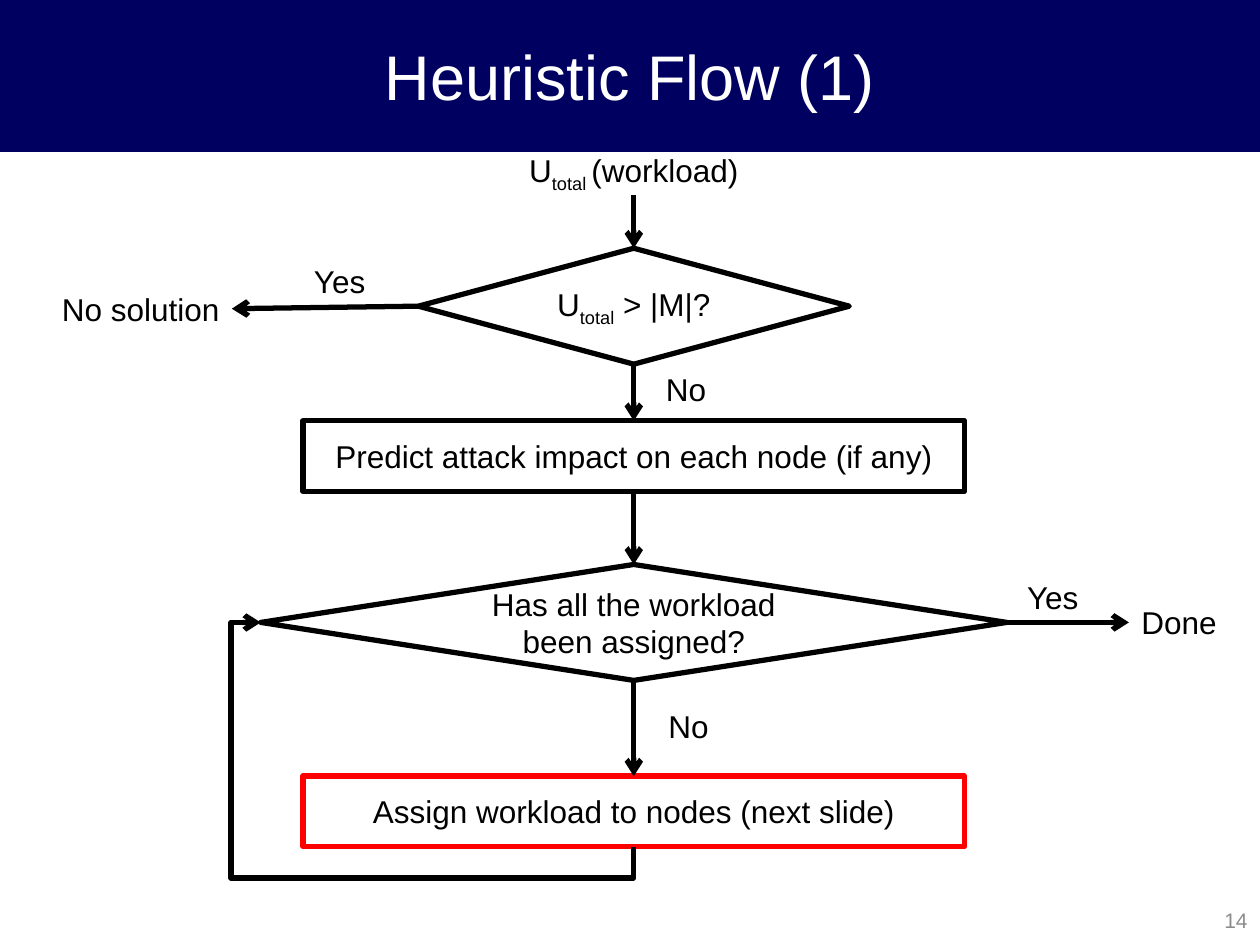
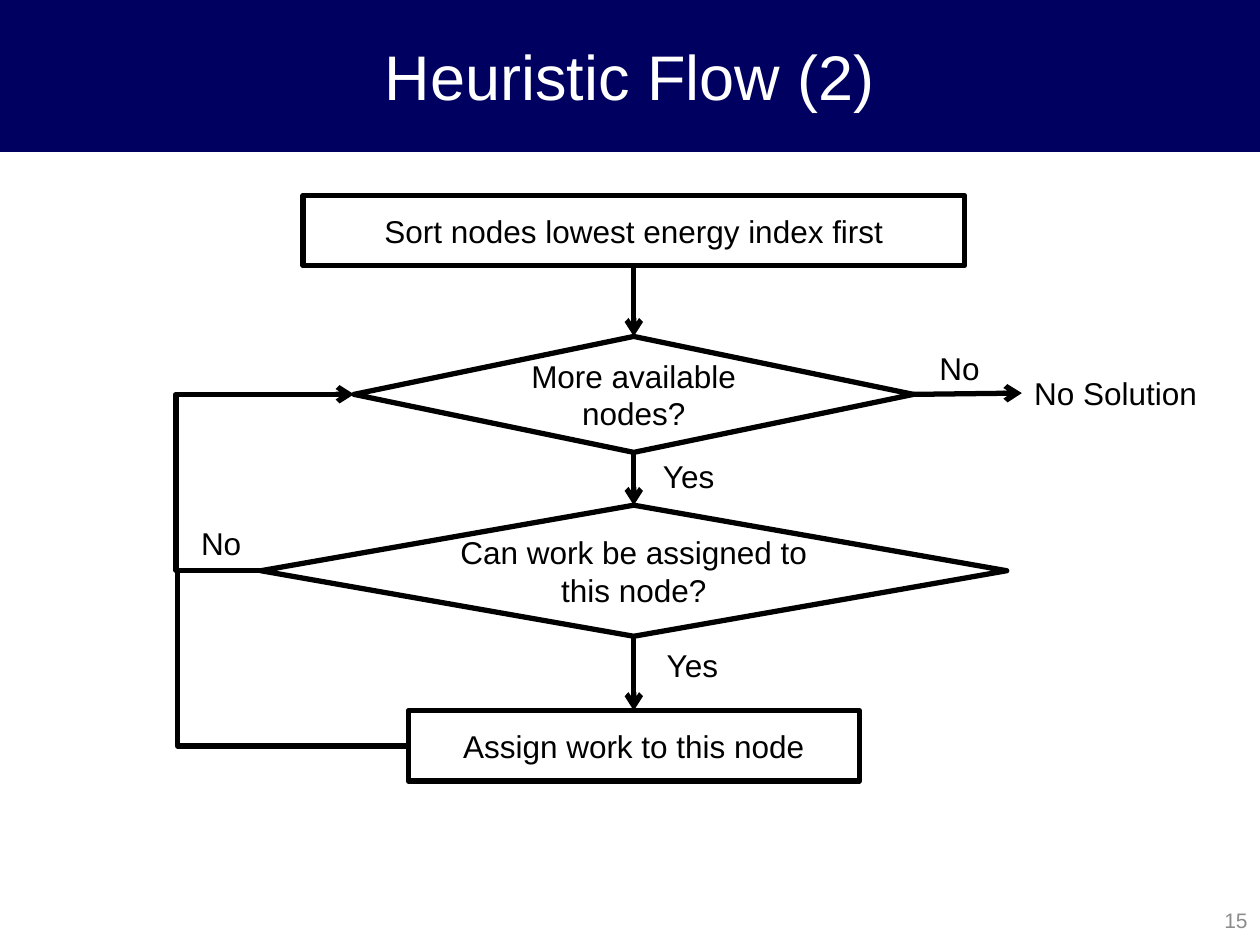
from pptx import Presentation, util as u
from pptx.dml.color import RGBColor
from pptx.enum import shapes, text
from pptx.oxml import ns
from lxml import etree

COLS, ROWS = 100, 75
AXIS = 50.3
NAVY, BLACK, WHITE, RED, GREY = "000060", "000000", "FFFFFF", "FF0000", "8C8C8C"
TOP, LEFT, BOTTOM, RIGHT = range(4)
RECT, DIAMOND = shapes.MSO_SHAPE.RECTANGLE, shapes.MSO_SHAPE.DIAMOND
ALIGN, ANCHOR = text.PP_ALIGN, text.MSO_ANCHOR


def rgb(value):
    return RGBColor.from_string(value)


def apply(target, formats):
    for name, value in formats.items():
        setattr(target, name, value)


class Flow:
    def __init__(self, prs):
        self.prs = prs
        self.s = None

    def x(self, cols):
        return round(self.prs.slide_width * cols / COLS)

    def y(self, rows):
        return round(self.prs.slide_height * rows / ROWS)

    def slide(self, title, number):
        self.s = self.prs.slides.add_slide(self.prs.slide_layouts[6])
        self.shape(RECT, 0, 0, COLS, 12, title, fill=NAVY, line=NAVY,
                   weight=0.75, size=36, color=WHITE)
        self.label(78.8, 71, 21.2, str(number), align=ALIGN.RIGHT,
                   anchor=ANCHOR.MIDDLE, size=12, color=GREY)

    def set_words(self, sp, words, align=ALIGN.CENTER, anchor=ANCHOR.MIDDLE,
                  size=18, color=BLACK):
        tf = sp.text_frame
        apply(tf, {"word_wrap": True, "vertical_anchor": anchor})
        p = tf.paragraphs[0]
        p.alignment = align
        for i, part in enumerate(words.split("_")):
            r = p.add_run()
            r.text = part
            apply(r.font, {"name": "Arial", "size": u.Pt(size)})
            r.font.color.rgb = rgb(color)
            if i % 2:
                r._r.get_or_add_rPr().set("baseline", "-25000")

    def shape(self, kind, left, top, width, height, words, fill=None,
              line=BLACK, weight=3, **style):
        sp = self.s.shapes.add_shape(kind, self.x(left), self.y(top),
                                     self.x(width), self.y(height))
        sp.shadow.inherit = False
        if fill:
            sp.fill.solid()
            sp.fill.fore_color.rgb = rgb(fill)
        else:
            sp.fill.background()
        sp.line.color.rgb = rgb(line)
        sp.line.width = u.Pt(weight)
        self.set_words(sp, words, **style)
        return sp

    def step(self, top, words, width=52.5, line=BLACK):
        return self.shape(RECT, AXIS - width / 2, top, width, 5.6, words, line=line)

    def decision(self, top, words, width, height=9.2):
        return self.shape(DIAMOND, AXIS - width / 2, top, width, height, words)

    def label(self, left, top, width, words, align=ALIGN.CENTER,
              anchor=ANCHOR.TOP, **style):
        sp = self.s.shapes.add_textbox(self.x(left), self.y(top),
                                       self.x(width), self.y(4))
        self.set_words(sp, words, align=align, anchor=anchor, **style)
        return sp

    def answer(self, left, top, words):
        return self.label(left, top, 10.9, words)

    def style_line(self, c, head=True):
        c.line.color.rgb = rgb(BLACK)
        c.line.width = u.Pt(3)
        if head:
            etree.SubElement(c.line._get_or_add_ln(), ns.qn("a:tailEnd"), type="arrow")
        etree.SubElement(c._element.spPr, ns.qn("a:effectLst"))

    def arrow(self, start, end, start_side=BOTTOM, end_side=TOP):
        c = self.s.shapes.add_connector(shapes.MSO_CONNECTOR.STRAIGHT, 0, 0, 0, 0)
        c.begin_connect(start, start_side)
        c.end_connect(end, end_side)
        self.style_line(c)

    def elbow(self, start, start_side, bends, end=None, point=(0, 0), turned=False):
        c = self.s.shapes.add_connector(shapes.MSO_CONNECTOR.ELBOW, 0, 0,
                                        self.x(point[0]), self.y(point[1]))
        c.begin_connect(start, start_side)
        if end is not None:
            c.end_connect(end, LEFT)
        self.style_line(c, end is not None)
        spPr = c._element.spPr
        if turned:
            mid_x, mid_y = c.left + c.width // 2, c.top + c.height // 2
            width, height = c.height, c.width
            apply(c, {"left": mid_x - width // 2, "top": mid_y - height // 2,
                      "width": width, "height": height})
            xfrm = spPr.find(ns.qn("a:xfrm"))
            xfrm.attrib.pop("flipV", None)
            xfrm.set("rot", "5400000")
            xfrm.set("flipH", "1")
        geom = spPr.find(ns.qn("a:prstGeom"))
        geom.set("prst", f"bentConnector{len(bends) + 2}")
        guides = geom.find(ns.qn("a:avLst"))
        for i, bend in enumerate(bends, 1):
            etree.SubElement(guides, ns.qn("a:gd"), name=f"adj{i}",
                             fmla=f"val {round(bend * 100000)}")


def workload_flow(flow):
    flow.slide("Heuristic Flow (1)", 14)
    workload = flow.label(AXIS - 10.55, 11.5, 21.1, "U_total _(workload)")
    capacity = flow.decision(19.7, "U_total_ > |M|?", 34.2)
    no_solution = flow.label(2.7, 22.5, 15.7, "No solution", ALIGN.RIGHT)
    predict = flow.step(33.4, "Predict attack impact on each node (if any)")
    assigned = flow.decision(44.8, "Has all the workload been assigned?", 59.2)
    done = flow.label(89.6, 47.4, 10.4, "Done", ALIGN.LEFT)
    assign = flow.step(61.6, "Assign workload to nodes (next slide)", line=RED)
    for left, top, words in ((21.5, 20.3, "Yes"), (49, 28.9, "No"),
                             (78.1, 45.4, "Yes"), (49.2, 55.6, "No")):
        flow.answer(left, top, words)
    main_path = (workload, capacity, predict, assigned, assign)
    for start, end in zip(main_path, main_path[1:]):
        flow.arrow(start, end)
    flow.arrow(capacity, no_solution, LEFT, RIGHT)
    flow.arrow(assigned, done, RIGHT, LEFT)
    flow.elbow(assign, BOTTOM, (-0.14, 1.08), assigned, turned=True)


def node_flow(flow):
    flow.slide("Heuristic Flow (2)", 15)
    sort = flow.step(15.5, "Sort nodes lowest energy index first")
    available = flow.decision(26.7, "More available nodes?", 44.4)
    fits = flow.decision(40.1, "Can work be assigned to this node?", 59.2, 10.4)
    assign = flow.step(56.4, "Assign work to this node", 35.8)
    no_solution = flow.label(81.1, 29.2, 20.7, "No Solution", ALIGN.LEFT)
    for left, top, words in ((49.2, 35.8, "Yes"), (49.5, 50.8, "Yes"),
                             (12.1, 41.1, "No"), (70.7, 27.2, "No")):
        flow.answer(left, top, words)
    main_path = (sort, available, fits, assign)
    for start, end in zip(main_path, main_path[1:]):
        flow.arrow(start, end)
    flow.arrow(available, no_solution, RIGHT, LEFT)
    flow.elbow(fits, LEFT, (-0.91,), available)
    flow.elbow(assign, LEFT, (0.99,), point=(13.9, 45.3))


def main():
    prs = Presentation()
    apply(prs, {"slide_width": u.Inches(10), "slide_height": u.Inches(7.5)})
    flow = Flow(prs)
    workload_flow(flow)
    node_flow(flow)
    prs.save("out.pptx")


if __name__ == "__main__":
    main()
